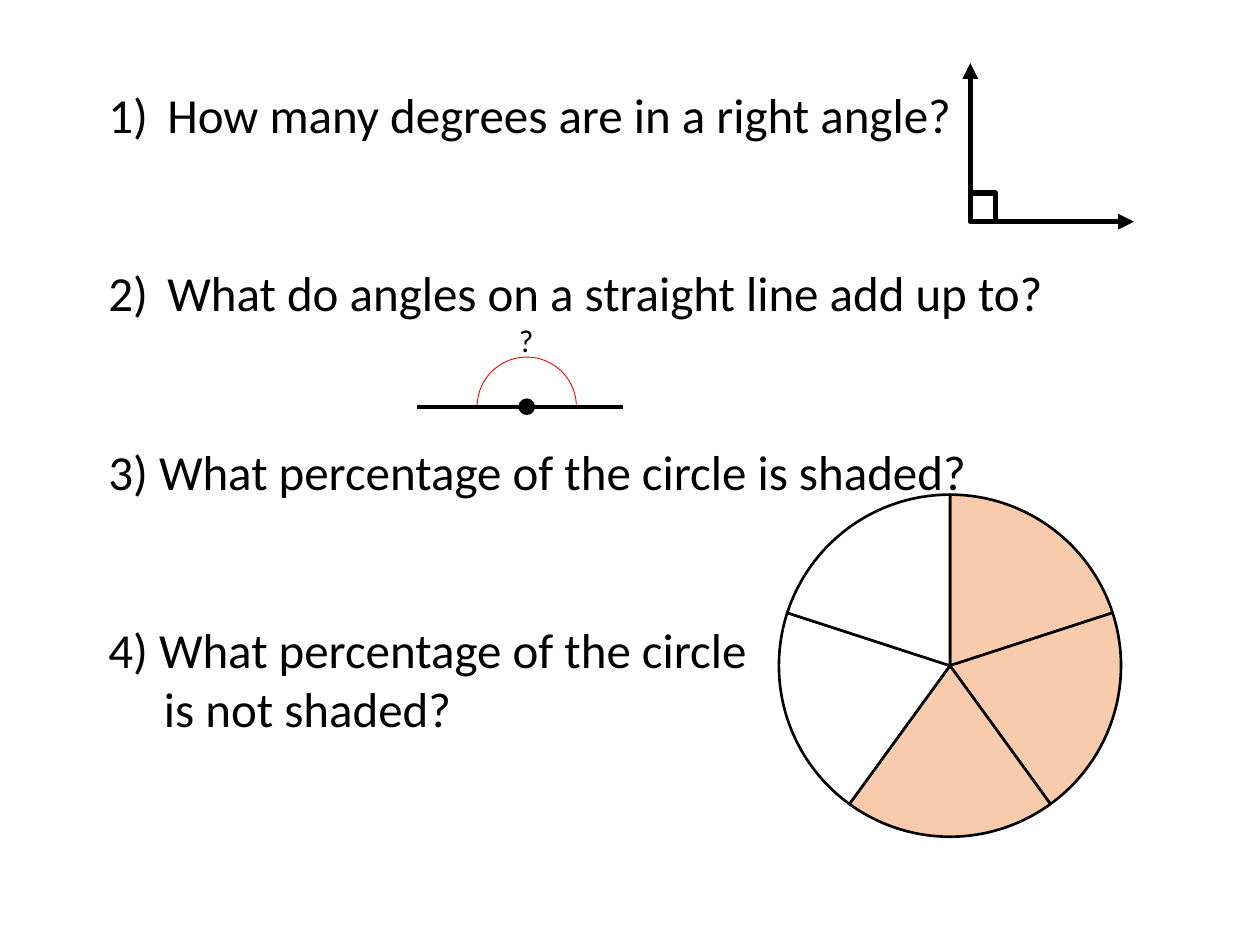
from pptx import Presentation
from pptx.chart.data import CategoryChartData
from pptx.dml.color import RGBColor
from pptx.enum.chart import XL_CHART_TYPE as Chart
from pptx.enum.shapes import MSO_CONNECTOR as Link, MSO_SHAPE as Shape
from pptx.enum.text import MSO_ANCHOR as Anchor, MSO_AUTO_SIZE as Fit
from pptx.oxml import parse_xml
from pptx.oxml.ns import nsdecls
from pptx.util import Cm, Pt

FONT, BLACK, RED, PEACH, WHITE = "Calibri", "000000", "FF0000", "F8CBAD", "FFFFFF"
QUESTIONS = [
    ("1)\tHow many degrees are in a right angle?", 1.19),
    ("2)\tWhat do angles on a straight line add up to?", 1.19),
    ("3) What percentage of the circle is shaded?", 1.12),
    ("4) What percentage of the circle\vis not shaded?", 1.12),
]
SIZE, GAP = 28, 68.4
LABELS = ["1", "2", "3", "4", "5"]
PARTS = [20] * 5
SHADES = [PEACH] * 3 + [WHITE] * 2
CORNER, TIP, SIDE = (19.56, 4.47), (22.86, 1.27), (0.51, 0.58)
BASE, DOT, DOT_SIZE, ARC_SIZE = (8.41, 12.55), (10.62, 8.2), 0.3, 2.0
PIE_BOX, PIE_SIZE = (14.86, 9.63, 8.59, 7.59), 6.9


def paint(fmt, color):
    fmt.solid()
    fmt.fore_color.rgb = RGBColor.from_string(color)


def style(font, size):
    font.name, font.size = FONT, Pt(size)
    font.color.rgb = RGBColor.from_string(BLACK)


def stroke(line, color, width):
    paint(line.fill, color)
    line.width = Pt(width)


def draw(kind, box, color, width, fill=None):
    shape = shapes.add_shape(kind, *map(Cm, box))
    shape.shadow.inherit = False
    stroke(shape.line, color, width)
    if fill:
        paint(shape.fill, fill)
    else:
        shape.fill.background()
    return shape


def link(start, end, width, arrow=False):
    line = shapes.add_connector(Link.STRAIGHT, *map(Cm, start + end))
    stroke(line.line, BLACK, width)
    props = line._element.spPr
    if arrow:
        props.ln.append(parse_xml(f'<a:tailEnd {nsdecls("a")} type="triangle"/>'))
    props.append(parse_xml(f'<a:effectLst {nsdecls("a")}/>'))


def around(center, size):
    return center[0] - size / 2, center[1] - size / 2, size, size


deck = Presentation()
deck.slide_width, deck.slide_height = Cm(25.4), Cm(19.05)
slide = deck.slides.add_slide(deck.slide_layouts[1])
shapes = slide.shapes
title = shapes.title._element
title.getparent().remove(title)

body = slide.placeholders[1]
body.left, body.top, body.width, body.height = map(Cm, (1.93, 1.57, 20.83, 13.41))
frame = body.text_frame
frame.auto_size, frame.vertical_anchor = Fit.NONE, Anchor.TOP
for i, (text, indent) in enumerate(QUESTIONS):
    para = frame.paragraphs[0] if i == 0 else frame.add_paragraph()
    para.text = text
    props = para._p.get_or_add_pPr()
    props.set("marL", str(Cm(indent)))
    props.set("indent", str(-Cm(indent)))
    props.append(parse_xml(f'<a:buNone {nsdecls("a")}/>'))
    para.space_before = Pt(GAP if i else 0)
    for run in para.runs:
        style(run.font, SIZE)

link(CORNER, (CORNER[0], TIP[1]), 3, True)
link(CORNER, (TIP[0], CORNER[1]), 3, True)
draw(Shape.RECTANGLE, (CORNER[0], CORNER[1] - SIDE[1], *SIDE), BLACK, 3)

draw(Shape.OVAL, around(DOT, DOT_SIZE), BLACK, 1, BLACK)
link((BASE[0], DOT[1]), (BASE[1], DOT[1]), 2.25)
arc = draw(Shape.ARC, around(DOT, ARC_SIZE), RED, 0.5)
arc.adjustments[0], arc.adjustments[1] = 109.11, 214.53
mark = shapes.add_textbox(*map(Cm, (10.21, 6.35, 1.5, 1.02))).text_frame
mark.word_wrap = True
mark.text = "?"
style(mark.paragraphs[0].runs[0].font, 18)

data = CategoryChartData()
data.categories = LABELS
data.add_series("Series 1", PARTS)
chart = shapes.add_chart(Chart.PIE, *map(Cm, PIE_BOX), data).chart
chart.has_legend = chart.has_title = False
style(chart.font, 10)
plot = chart.plots[0]
plot.vary_by_categories = True
for i, shade in enumerate(SHADES):
    part = plot.series[0].points[i].format
    paint(part.fill, shade)
    stroke(part.line, BLACK, 1.5)
wide, high = PIE_SIZE / PIE_BOX[2], PIE_SIZE / PIE_BOX[3]
area = chart._chartSpace.chart.plotArea
for old in area.findall("{*}layout"):
    area.remove(old)
spots = {"x": (1 - wide) / 2, "y": (1 - high) / 2, "w": wide, "h": high}
places = "".join(f'<c:{key} val="{spot:.3f}"/>' for key, spot in spots.items())
area.insert(0, parse_xml(
    f'<c:layout {nsdecls("c")}><c:manualLayout><c:layoutTarget val="inner"/>'
    f'<c:xMode val="edge"/><c:yMode val="edge"/>{places}</c:manualLayout></c:layout>'))

deck.save("out.pptx")
